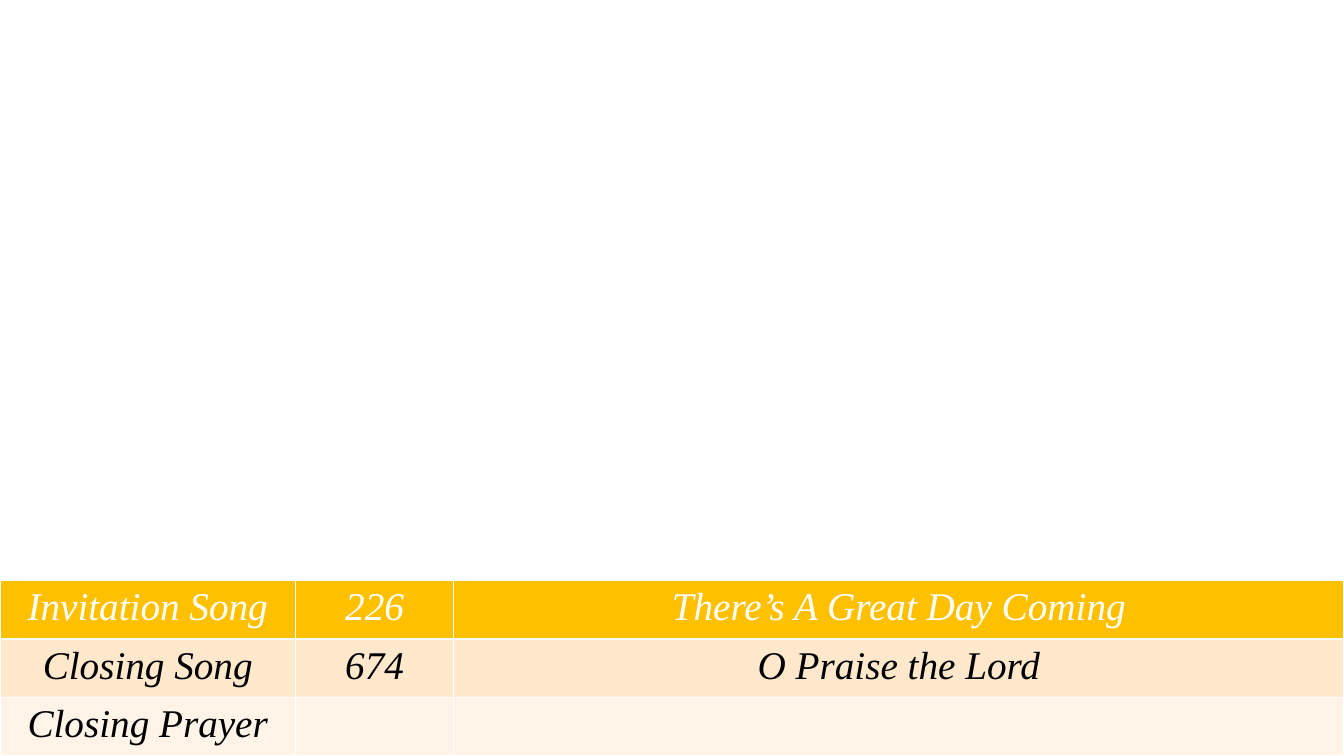
from dataclasses import dataclass

from pptx import Presentation
from pptx.dml.color import RGBColor
from pptx.enum.text import PP_ALIGN
from pptx.util import Inches, Pt

CENTER = PP_ALIGN.CENTER

# Content: part of the service, song number, song title
SERVICE = [
    ("Invitation Song", "226", "There’s A Great Day Coming"),
    ("Closing Song", "674", "O Praise the Lord"),
    ("Closing Prayer", "", ""),
]


@dataclass(frozen=True)
class Theme:
    font: str = "Times New Roman"
    size: int = 28
    # Fill and text colour of each row
    rows: tuple = (("FFC000", "FFFFFF"), ("FFE8CC", "000000"), ("FFF4E7", "000000"))


THEME = Theme()

# Grid: the table spans the slide and rests on its bottom edge
SLIDE_W, SLIDE_H = 13.33, 7.5
ROW_H = 0.58
PART_W, NUMBER_W = 2.93, 1.57
COLUMNS = (PART_W, NUMBER_W, SLIDE_W - PART_W - NUMBER_W)
TABLE_H = ROW_H * len(SERVICE)


def write(frame, text, *, color, size=THEME.size, font=THEME.font):
    line = frame.paragraphs[0]
    line.alignment = CENTER
    line.font.size = Pt(size)
    if not text:
        return
    run = line.add_run()
    run.text = text
    run.font.name = font
    run.font.size = Pt(size)
    run.font.italic = True
    run.font.bold = False
    run.font.color.rgb = RGBColor.from_string(color)


def main():
    deck = Presentation()
    deck.slide_width, deck.slide_height = Inches(SLIDE_W), Inches(SLIDE_H)
    slide = deck.slides.add_slide(deck.slide_layouts[6])

    # Order of service; the default table style draws the white rules
    order = slide.shapes.add_table(
        len(SERVICE), len(COLUMNS),
        Inches(0), Inches(SLIDE_H - TABLE_H), Inches(SLIDE_W), Inches(TABLE_H),
    ).table
    for column, width in zip(order.columns, COLUMNS):
        column.width = Inches(width)
    for row, entries, (fill, color) in zip(order.rows, SERVICE, THEME.rows):
        row.height = Inches(ROW_H)
        for cell, entry in zip(row.cells, entries):
            cell.fill.solid()
            cell.fill.fore_color.rgb = RGBColor.from_string(fill)
            write(cell.text_frame, entry, color=color)

    deck.save("out.pptx")


if __name__ == "__main__":
    main()
